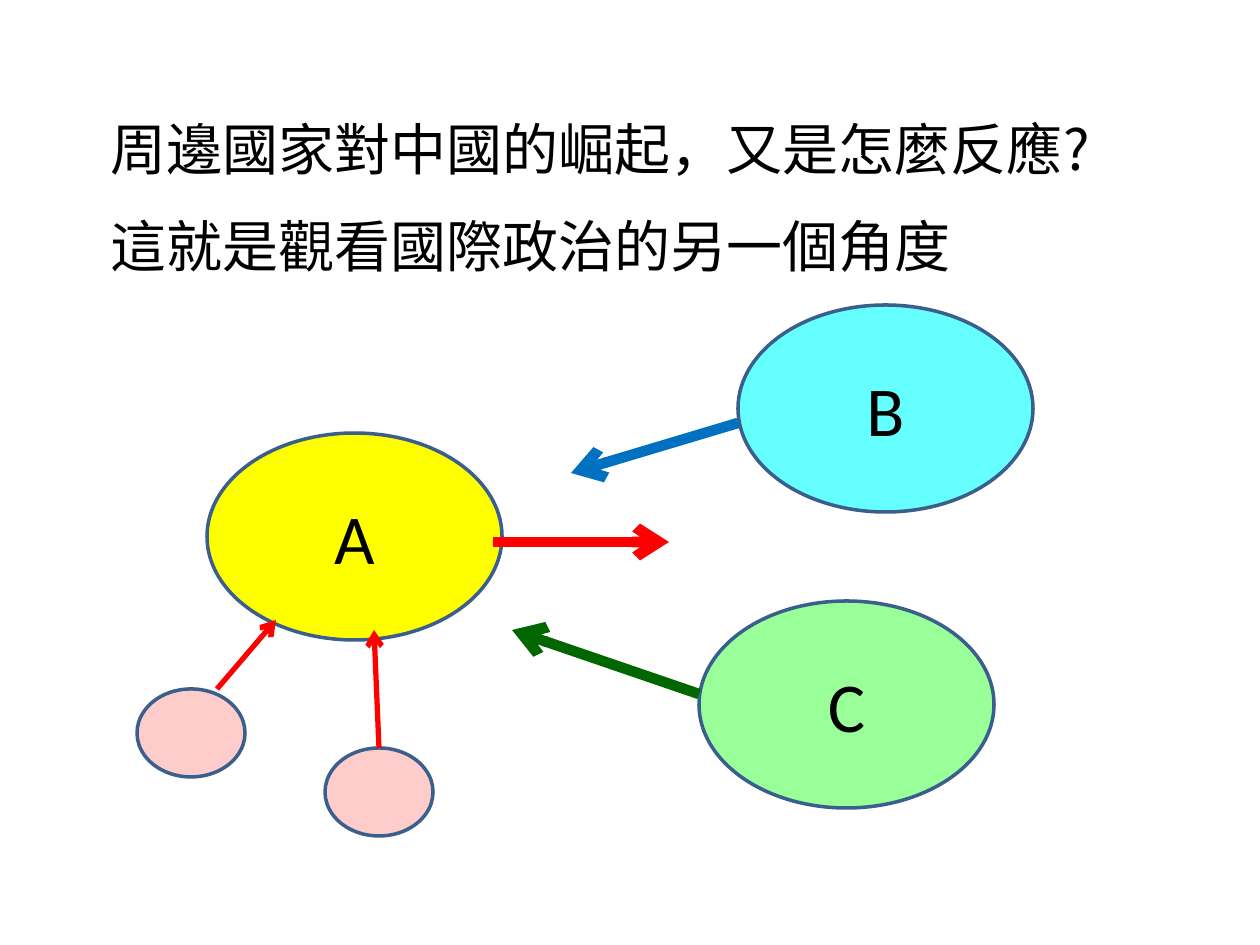
"""Build a slide of countries A, B and C pushing on one another, with two small neighbours."""
from dataclasses import dataclass

import pptx
import pptx.dml.color
import pptx.enum.shapes
import pptx.enum.text
import pptx.oxml
import pptx.oxml.ns
import pptx.util

EMU_PER_PX = 914400 / 126
Point = tuple[int, int]


@dataclass(frozen=True)
class Theme:
    ink: str = "000000"
    outline: str = "3A5F8C"
    yellow: str = "FFFF00"
    cyan: str = "66FFFF"
    mint: str = "99FF99"
    pink: str = "FFCCCC"
    red: str = "FF0000"
    blue: str = "0070C0"
    green: str = "006600"
    statement_font: str = "Noto Sans CJK SC"
    label_font: str = "Calibri"
    statement_size: int = 32
    label_size: int = 40
    outline_width: int = 2
    strong_arrow: int = 6
    weak_arrow: int = 3


THEME = Theme()
LARGE = (295, 207)
SMALL = (108, 88)


@dataclass(frozen=True)
class Country:
    corner: Point
    size: Point
    fill: str
    label: str = ""


@dataclass(frozen=True)
class Arrow:
    start: Point
    end: Point
    colour: str
    width: int


STATEMENTS = ("周邊國家對中國的崛起，又是怎麼反應?", "這就是觀看國際政治的另一個角度")
STATEMENT_LEFT, STATEMENT_TOP, STATEMENT_PITCH = 98, 108, 97
STATEMENT_SIZE = (994, 81)

DIAGRAM = (
    Country((207, 433), LARGE, THEME.yellow, "A"),
    Arrow((493, 542), (669, 542), THEME.red, THEME.strong_arrow),
    Country((738, 305), LARGE, THEME.cyan, "B"),
    Country((699, 601), LARGE, THEME.mint, "C"),
    Arrow((738, 423), (571, 473), THEME.blue, THEME.strong_arrow),
    Arrow((699, 694), (512, 630), THEME.green, THEME.strong_arrow),
    Country((325, 748), SMALL, THEME.pink),
    Arrow((379, 748), (374, 630), THEME.red, THEME.weak_arrow),
    Country((137, 689), SMALL, THEME.pink),
    Arrow((217, 689), (276, 620), THEME.red, THEME.weak_arrow),
)


def px(length: int) -> pptx.util.Emu:
    return pptx.util.Emu(round(length * EMU_PER_PX))


def rgb(colour: str) -> pptx.dml.color.RGBColor:
    return pptx.dml.color.RGBColor.from_string(colour)


def apply_format(target, values: dict) -> None:
    for name, value in values.items():
        setattr(target, name, value)


def write_text(text_frame, text: str, font_name: str, size: int, alignment) -> None:
    paragraph = text_frame.paragraphs[0]
    paragraph.alignment = alignment
    run = paragraph.add_run()
    run.text = text
    apply_format(run.font, {"name": font_name, "size": pptx.util.Pt(size)})
    run.font.color.rgb = rgb(THEME.ink)
    east_asian = pptx.oxml.parse_xml(
        f'<a:ea {pptx.oxml.ns.nsdecls("a")} typeface="{font_name}"/>'
    )
    run.font._element.append(east_asian)


def draw_statement(slide, row: int, text: str) -> None:
    top = STATEMENT_TOP + row * STATEMENT_PITCH
    box = slide.shapes.add_textbox(*map(px, (STATEMENT_LEFT, top, *STATEMENT_SIZE)))
    apply_format(box.text_frame, {
        "word_wrap": True,
        "margin_right": 0,
        "auto_size": pptx.enum.text.MSO_AUTO_SIZE.SHAPE_TO_FIT_TEXT,
    })
    write_text(box.text_frame, text, THEME.statement_font, THEME.statement_size,
               pptx.enum.text.PP_ALIGN.LEFT)


def draw_country(slide, country: Country) -> None:
    shape = slide.shapes.add_shape(pptx.enum.shapes.MSO_SHAPE.OVAL,
                                   *map(px, (*country.corner, *country.size)))
    shape.shadow.inherit = False
    shape.fill.solid()
    shape.fill.fore_color.rgb = rgb(country.fill)
    shape.line.color.rgb = rgb(THEME.outline)
    shape.line.width = pptx.util.Pt(THEME.outline_width)
    if country.label:
        shape.text_frame.vertical_anchor = pptx.enum.text.MSO_ANCHOR.MIDDLE
        write_text(shape.text_frame, country.label, THEME.label_font, THEME.label_size,
                   pptx.enum.text.PP_ALIGN.CENTER)


def draw_arrow(slide, arrow: Arrow) -> None:
    connector = slide.shapes.add_connector(pptx.enum.shapes.MSO_CONNECTOR.STRAIGHT,
                                           *map(px, (*arrow.start, *arrow.end)))
    connector.line.color.rgb = rgb(arrow.colour)
    connector.line.width = pptx.util.Pt(arrow.width)
    namespace = pptx.oxml.ns.nsdecls("a")
    properties = connector._element.spPr
    line = properties.find(pptx.oxml.ns.qn("a:ln"))
    line.append(pptx.oxml.parse_xml(f'<a:tailEnd {namespace} type="arrow"/>'))
    properties.append(pptx.oxml.parse_xml(f"<a:effectLst {namespace}/>"))


def main() -> None:
    presentation = pptx.Presentation()
    apply_format(presentation, {"slide_width": px(1260), "slide_height": px(945)})
    slide = presentation.slides.add_slide(presentation.slide_layouts.get_by_name("Blank"))
    for row, text in enumerate(STATEMENTS):
        draw_statement(slide, row, text)
    for item in DIAGRAM:
        if isinstance(item, Country):
            draw_country(slide, item)
        else:
            draw_arrow(slide, item)
    presentation.save("out.pptx")


if __name__ == "__main__":
    main()
